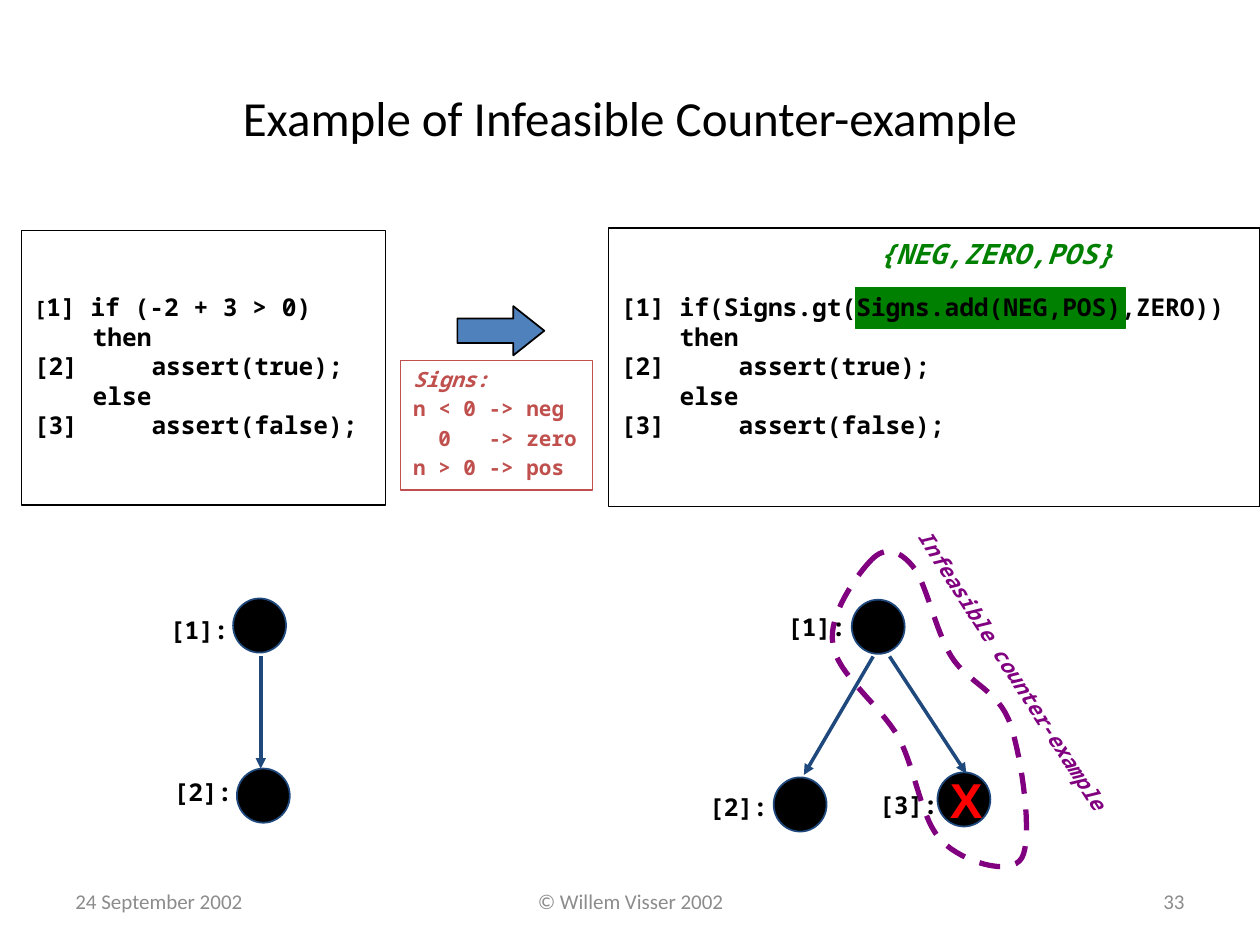
import pptx
import pptx.dml.color
import pptx.enum.dml
import pptx.enum.shapes
import pptx.enum.text
import pptx.oxml.ns
import pptx.util
from lxml import etree

Inches, Pt = pptx.util.Inches, pptx.util.Pt
RGBColor = pptx.dml.color.RGBColor
SHAPE = pptx.enum.shapes.MSO_SHAPE
ALIGN = pptx.enum.text.PP_ALIGN
ANCHOR = pptx.enum.text.MSO_ANCHOR

BLACK = RGBColor(0x00, 0x00, 0x00)
GRAY = RGBColor(0x8C, 0x8C, 0x8C)
GREEN = RGBColor(0x00, 0x80, 0x00)
NAVY = RGBColor(0x1F, 0x49, 0x7D)
BLUE = RGBColor(0x4F, 0x81, 0xBD)
BRICK = RGBColor(0xC0, 0x50, 0x4D)
PURPLE = RGBColor(0x80, 0x00, 0x80)
RED = RGBColor(0xFF, 0x00, 0x00)
MONO = "Noto Sans Mono"

BRANCHES = ["    then", "[2]     assert(true);", "    else", "[3]     assert(false);"]
NODE_W, NODE_H = 0.42, 0.43
LOOP_START = (6.92, 4.44)
LOOP_CURVES = [  # two control points and an end point each
    ((6.81, 4.55), (6.57, 4.88), (6.61, 5.11)),
    ((6.64, 5.35), (6.98, 5.59), (7.13, 5.85)),
    ((7.27, 6.11), (7.31, 6.52), (7.48, 6.68)),
    ((7.64, 6.84), (8.02, 6.96), (8.11, 6.81)),
    ((8.2, 6.65), (8.11, 6.02), (8.02, 5.75)),
    ((7.93, 5.48), (7.68, 5.42), (7.55, 5.21)),
    ((7.42, 5), (7.35, 4.61), (7.24, 4.49)),
    ((7.13, 4.36), (7.02, 4.34), LOOP_START),
]


def style_shape(sp, fill, line, width):
    sp.shadow.inherit = False
    if fill is None:
        sp.fill.background()
    else:
        sp.fill.solid()
        sp.fill.fore_color.rgb = fill
    sp.line.color.rgb = line
    sp.line.width = Pt(width)


def add_shape(s, kind, box, fill, line, width=1):
    sp = s.shapes.add_shape(kind, *map(Inches, box))
    style_shape(sp, fill, line, width)
    return sp


def format_paragraph(p, size, color, name=MONO, bold=True, italic=False, align=ALIGN.LEFT):
    p.alignment = align
    p.font.size = Pt(size)
    p.font.name = name
    p.font.bold = bold
    p.font.italic = italic
    p.font.color.rgb = color


def add_text(s, box, text, size, color, wrap=False, anchor=ANCHOR.TOP, **font):
    sp = s.shapes.add_textbox(*map(Inches, box))
    tf = sp.text_frame
    tf.word_wrap = wrap
    tf.vertical_anchor = anchor
    tf.text = text
    format_paragraph(tf.paragraphs[0], size, color, **font)
    return sp


def add_code_box(s, box, first_line, top_inset):
    sp = add_shape(s, SHAPE.RECTANGLE, box, None, BLACK)
    tf = sp.text_frame
    tf.vertical_anchor = ANCHOR.TOP
    tf.margin_top = Inches(top_inset)
    tf.text = "\n".join([first_line] + BRANCHES)
    for p in tf.paragraphs:
        format_paragraph(p, 14, BLACK)
    return sp


def add_signs_box(s):
    sp = add_shape(s, SHAPE.RECTANGLE, (3.18, 2.86, 1.52, 1.03), None, BRICK, 0.75)
    tf = sp.text_frame
    tf.word_wrap = False
    tf.vertical_anchor = ANCHOR.TOP
    tf.text = "Signs:\nn < 0 -> neg\n  0   -> zero\nn > 0 -> pos"
    for i, p in enumerate(tf.paragraphs):
        format_paragraph(p, 12, BRICK, italic=i == 0)
        if i:
            p.space_before = Pt(2.4)


def add_node(s, x, y):
    add_shape(s, SHAPE.OVAL, (x, y, NODE_W, NODE_H), BLACK, NAVY)


def add_label(s, x, y, text):
    add_text(s, (x, y, 0.67, 0.33), text, 14, BLACK)


def add_arrow(s, x1, y1, x2, y2):
    c = s.shapes.add_connector(pptx.enum.shapes.MSO_CONNECTOR.STRAIGHT,
                               *map(Inches, (x1, y1, x2, y2)))
    c.line.color.rgb = NAVY
    c.line.width = Pt(2)
    qn = pptx.oxml.ns.qn
    sp_pr = c._element.spPr
    etree.SubElement(sp_pr.get_or_add_ln(), qn("a:tailEnd"), type="triangle")
    etree.SubElement(sp_pr, qn("a:effectLst"))


def bezier_points(start, curves, steps=16):
    """Sample a chain of cubic curves as a list of points."""
    points = []
    for a, b, end in curves:
        for i in range(1, steps + 1):
            t = i / steps
            u = 1 - t
            points.append(tuple(
                u**3 * p0 + 3 * u * u * t * p1 + 3 * u * t * t * p2 + t**3 * p3
                for p0, p1, p2, p3 in zip(start, a, b, end)))
        start = end
    return points


def add_counter_example_loop(s):
    # The freeform builder rounds its coordinates, so it is given whole EMUs.
    points = [(Inches(x), Inches(y)) for x, y in bezier_points(LOOP_START, LOOP_CURVES)]
    fb = s.shapes.build_freeform(*map(Inches, LOOP_START), scale=1.0)
    fb.add_line_segments(points, close=True)
    sp = fb.convert_to_shape()
    style_shape(sp, None, PURPLE, 3)
    sp.line.dash_style = pptx.enum.dml.MSO_LINE.DASH
    caption = add_text(s, (6.63, 5.18, 2.82, 0.3), "Infeasible counter-example",
                       12, PURPLE, italic=True)
    caption.rotation = 57.3


def add_title(s):
    title = s.shapes.title
    title.left, title.top, title.width, title.height = map(Inches, (0.5, 0.3, 9, 1.25))
    title.text_frame.text = "Example of Infeasible Counter-example"
    title.text_frame.vertical_anchor = ANCHOR.MIDDLE
    format_paragraph(title.text_frame.paragraphs[0], 28, BLACK,
                     name="Calibri", bold=False, align=ALIGN.CENTER)


def add_footer(s):
    for x, w, text, align in [(0.5, 2.33, "24 September 2002", ALIGN.LEFT),
                              (3.42, 3.17, "© Willem Visser 2002", ALIGN.CENTER),
                              (7.17, 2.33, "33", ALIGN.RIGHT)]:
        add_text(s, (x, 6.95, w, 0.4), text, 12, GRAY, wrap=True, anchor=ANCHOR.MIDDLE,
                 name="Calibri", bold=False, align=align)


def add_code(s):
    add_shape(s, SHAPE.RECTANGLE, (6.79, 2.28, 2.14, 0.33), GREEN, GREEN, 0.75)
    add_text(s, (6.88, 1.83, 2.07, 0.37), "{NEG,ZERO,POS}", 16, GREEN, italic=True)
    add_code_box(s, (4.83, 1.81, 5.17, 2.21),
                 "[1] if(Signs.gt(Signs.add(NEG,POS),ZERO))", 0.51)
    concrete = add_code_box(s, (0.17, 1.83, 2.89, 2.18), "[", 0.49)
    p = concrete.text_frame.paragraphs[0]
    p.runs[0].font.size = Pt(12)
    p.add_run().text = "1] if (-2 + 3 > 0)"
    add_signs_box(s)
    arrow = add_shape(s, SHAPE.RIGHT_ARROW, (3.63, 2.43, 0.69, 0.39), BLUE, BLACK)
    arrow.adjustments[1] = 0.63


def add_concrete_graph(s):
    add_node(s, 1.85, 4.75)
    add_arrow(s, 2.07, 5.21, 2.07, 6.1)
    add_node(s, 1.88, 6.1)
    add_label(s, 1.25, 4.83, "[1]:")
    add_label(s, 1.28, 6.12, "[2]:")


def add_abstract_graph(s):
    for x, y in [(7.44, 6.13), (6.76, 4.76), (6.14, 6.17)]:
        add_node(s, x, y)
    add_arrow(s, 6.93, 5.21, 6.38, 6.15)
    add_arrow(s, 7.06, 5.21, 7.67, 6.14)
    add_label(s, 6.15, 4.81, "[1]:")
    add_label(s, 5.53, 6.24, "[2]:")
    add_label(s, 6.88, 6.22, "[3]:")
    add_text(s, (7.44, 6.06, 0.58, 0.57), "X", 28, RED, wrap=True, name="Arial")


def main():
    prs = pptx.Presentation()
    prs.slide_width, prs.slide_height = Inches(10), Inches(7.5)
    s = prs.slides.add_slide(prs.slide_layouts[5])
    add_title(s)
    add_footer(s)
    add_code(s)
    add_concrete_graph(s)
    add_counter_example_loop(s)
    add_abstract_graph(s)
    prs.save("out.pptx")


if __name__ == "__main__":
    main()
